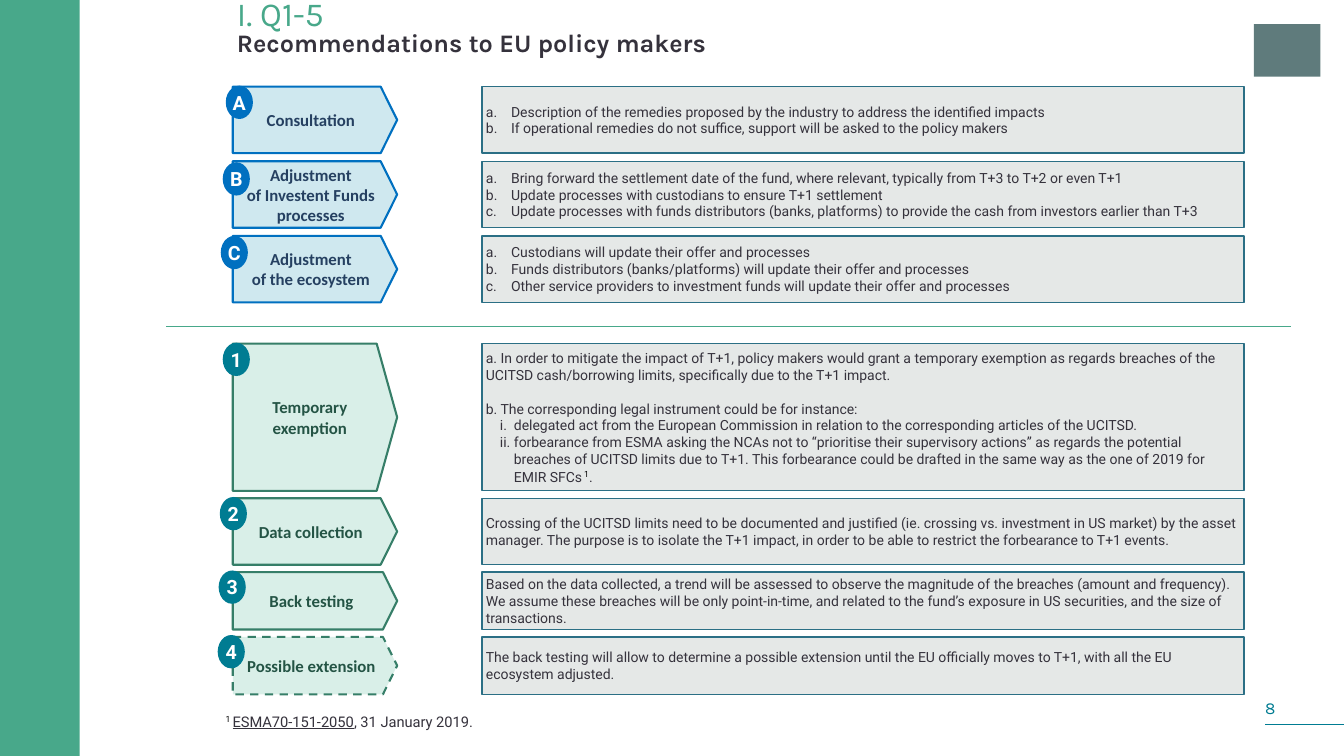
"""Build the slide of recommendations to EU policy makers."""
from dataclasses import dataclass, replace

from lxml.etree import SubElement
from pptx import Presentation
from pptx.dml.color import RGBColor as RGB
from pptx.enum.dml import MSO_LINE as Dash
from pptx.enum.shapes import MSO_CONNECTOR as Conn, MSO_SHAPE as Shp
from pptx.enum.text import MSO_ANCHOR as Anchor, PP_ALIGN as Align
from pptx.oxml.ns import qn
from pptx.util import Pt


@dataclass(frozen=True)
class Font:
    name: str
    size: float
    color: str
    bold: bool = False
    underline: bool = False
    raised: bool = False


@dataclass(frozen=True)
class Theme:
    green: str = "48A88A"
    teal: str = "007C92"
    blue: str = "0070C0"
    logo: str = "5F7B7C"
    panel: str = "E5E8E7"
    panel_line: str = "2B6F85"
    section: Font = Font("Karla", 24, "48A88A")
    title: Font = Font("Karla", 18, "35323C", bold=True)
    page: Font = Font("Karla", 12, "007C92")
    body: Font = Font("Roboto", 10, "35323C")
    note: Font = Font("Roboto", 10.5, "35323C")
    mark: Font = Font("Roboto", 10.5, "000000", raised=True)
    badge: Font = Font("Roboto", 14, "FFFFFF", bold=True)
    heading: Font = Font("Calibri", 12, "254061", bold=True)


@dataclass(frozen=True)
class Run:
    text: str
    font: Font


@dataclass(frozen=True)
class Para:
    runs: tuple[Run, ...]
    bullet: str = ""
    margin: float = 0
    hang: float = 0
    before: float = 0
    spacing: float = 1.0
    align: Align = Align.LEFT


@dataclass(frozen=True)
class Row:
    mark: str
    headings: tuple[str, ...]
    height: float
    badge: tuple[float, float]
    paras: tuple[Para, ...]
    point: float = 0.248
    dashed: bool = False


@dataclass(frozen=True)
class Group:
    top: float
    gap: float
    fill: str
    line: str
    badge: str
    heading: Font
    rows: tuple[Row, ...]


T = Theme()


def plain(text: str, font: Font = T.body, **kw) -> Para:
    """Return a paragraph of a single run."""
    return Para((Run(text, font),), **kw)


def lettered(*texts: str) -> tuple[Para, ...]:
    """Return paragraphs numbered a, b, c."""
    return tuple(plain(t, bullet="alphaLcPeriod", margin=18, hang=18) for t in texts)


def roman(*runs: Run) -> Para:
    """Return an indented paragraph with a roman number."""
    return Para(runs, bullet="romanLcPeriod", margin=20, hang=10)


INDUSTRY = Group(61.9, 5.8, "CFE8EF", T.blue, T.blue, T.heading, (
    Row("A", ("Consultation",), 47.5, (161.3, 61.2), lettered(
        "Description of the remedies proposed by the industry to address the identified impacts",
        "If operational remedies do not suffice, support will be asked to the policy makers")),
    Row("B", ("Adjustment", "of Investent Funds processes"), 47.5, (159.1, 115.9), lettered(
        "Bring forward the settlement date of the fund, where relevant, typically from T+3 to T+2 or even T+1",
        "Update processes with custodians to ensure T+1 settlement",
        "Update processes with funds distributors (banks, platforms) to provide the cash from investors "
        "earlier than T+3")),
    Row("C", ("Adjustment", "of the ecosystem"), 47.5, (157.7, 168.5), lettered(
        "Custodians will update their offer and processes",
        "Funds distributors (banks/platforms) will update their offer and processes",
        "Other service providers to investment funds will update their offer and processes")),
))
POLICY = Group(245.5, 5.3, "D9EFE8", "367E68", T.teal, replace(T.heading, color="245445"), (
    Row("1", ("Temporary", "exemption"), 105.1, (159.1, 244.8), (
        plain("a. In order to mitigate the impact of T+1, policy makers would grant a temporary exemption as "
              "regards breaches of the UCITSD cash/borrowing limits, specifically due to the T+1 impact."),
        plain("b. The corresponding legal instrument could be for instance:", before=12),
        roman(Run("delegated act from the European Commission in relation to the corresponding articles of "
                  "the UCITSD.", T.body)),
        roman(Run("forbearance from ESMA asking the NCAs not to “prioritise their supervisory actions” as "
                  "regards the potential\nbreaches of UCITSD limits due to T+1. This forbearance could be "
                  "drafted in the same way as the one of 2019 for\nEMIR SFCs", T.body),
              Run(" 1", T.mark), Run(".", T.body))), point=0.139),
    Row("2", ("Data collection",), 47.5, (157, 355), (
        plain("Crossing of the UCITSD limits need to be documented and justified (ie. crossing vs. investment "
              "in US market) by the asset manager. The purpose is to isolate the T+1 impact, in order to be "
              "able to restrict the forbearance to T+1 events."),)),
    Row("3", ("Back testing",), 41, (156.2, 407.5), (
        plain("Based on the data collected, a trend will be assessed to observe the magnitude of the breaches "
              "(amount and frequency)."),
        plain("We assume these breaches will be only point-in-time, and related to the fund’s exposure in US "
              "securities, and the size of transactions."))),
    Row("4", ("Possible extension",), 41, (155.5, 453.6), (
        plain("The back testing will allow to determine a possible extension until the EU officially moves "
              "to T+1, with all the EU ecosystem adjusted."),), dashed=True),
))


def write(s, paras: tuple[Para, ...], insets=(0, 0), anchor=Anchor.MIDDLE, wrap: bool = True) -> None:
    """Fill a shape with paragraphs, run by run."""
    tf = s.text_frame
    tf.word_wrap, tf.vertical_anchor = wrap, anchor
    tf.margin_left = tf.margin_right = Pt(insets[0])
    tf.margin_top = tf.margin_bottom = Pt(insets[1])
    for i, para in enumerate(paras):
        p = tf.add_paragraph() if i else tf.paragraphs[0]
        p.alignment, p.line_spacing = para.align, para.spacing
        if para.before:
            p.space_before = Pt(para.before)
        if para.bullet:
            ppr = p._p.get_or_add_pPr()
            ppr.set("marL", str(Pt(para.margin)))
            ppr.set("indent", str(-Pt(para.hang)))
            SubElement(ppr, qn("a:buAutoNum"), type=para.bullet)
        for run in para.runs:
            for n, line in enumerate(run.text.split("\n")):
                if n:
                    p.add_line_break()
                r = p.add_run()
                r.text = line
                f = r.font
                f.name, f.size, f.bold = run.font.name, Pt(run.font.size), run.font.bold
                f.underline = run.font.underline
                f.color.rgb = RGB.from_string(run.font.color)
                if run.font.raised:
                    f._element.set("baseline", "30000")


def add_box(shapes, kind: Shp, x: float, y: float, w: float, h: float, fill: str,
            line: str = "", width: float = 1):
    """Add a filled preset shape."""
    s = shapes.add_shape(kind, Pt(x), Pt(y), Pt(w), Pt(h))
    s.shadow.inherit = False
    s.fill.solid()
    s.fill.fore_color.rgb = RGB.from_string(fill)
    if line:
        s.line.color.rgb = RGB.from_string(line)
        s.line.width = Pt(width)
    else:
        s.line.fill.background()
    return s


def add_rule(shapes, x1: float, x2: float, y: float, color: str) -> None:
    """Add a thin horizontal line."""
    s = shapes.add_connector(Conn.STRAIGHT, Pt(x1), Pt(y), Pt(x2), Pt(y))
    s.line.color.rgb = RGB.from_string(color)
    s.line.width = Pt(0.5)
    SubElement(s._element.spPr, qn("a:effectLst"))


def add_text(shapes, x: float, y: float, w: float, h: float, *paras: Para, **kw) -> None:
    """Add a text box."""
    write(shapes.add_textbox(Pt(x), Pt(y), Pt(w), Pt(h)), paras, **kw)


def add_group(shapes, group: Group) -> None:
    """Add the rows of a group from top to bottom."""
    y = group.top
    for row in group.rows:
        panel = add_box(shapes, Shp.RECTANGLE, 344.2, y, 544.3, row.height, T.panel, T.panel_line)
        write(panel, row.paras, (2.9, 3.6))
        arrow = add_box(shapes, Shp.PENTAGON, 166.3, y, 117.4, row.height, group.fill, group.line, 1.5)
        arrow.adjustments[0] = row.point
        if row.dashed:
            arrow.line.dash_style = Dash.DASH
        write(arrow, tuple(plain(h, group.heading, align=Align.CENTER) for h in row.headings), (0, 3.6))
        badge = add_box(shapes, Shp.OVAL, *row.badge, 19.4, 23.8, group.badge)
        write(badge, (plain(row.mark, T.badge, align=Align.CENTER),), wrap=False)
        y += row.height + group.gap


def main() -> None:
    """Build and save the slide."""
    prs = Presentation()
    prs.slide_width, prs.slide_height = Pt(960), Pt(540)
    shapes = prs.slides.add_slide(prs.slide_layouts[6]).shapes
    add_box(shapes, Shp.RECTANGLE, 0, 0, 56.9, 540, T.green)
    add_box(shapes, Shp.RECTANGLE, 895.7, 17.3, 47.5, 37.4, T.logo)
    add_text(shapes, 169.2, 2, 620.6, 39, plain("I. Q1-5", T.section, spacing=0.8),
             plain("Recommendations to EU policy makers", T.title, spacing=0.8), anchor=Anchor.BOTTOM)
    for group in (INDUSTRY, POLICY):
        add_group(shapes, group)
    add_rule(shapes, 118.8, 922.3, 233.3, T.green)
    add_text(shapes, 154.1, 505.4, 709.2, 20.2, Para((
        Run("1 ", T.mark), Run("ESMA70-151-2050", replace(T.note, underline=True)),
        Run(", 31 January 2019.", T.note))), insets=(7.2, 3.6), anchor=Anchor.TOP)
    add_text(shapes, 903.6, 498.2, 13, 14.4, plain("8", T.page), wrap=False)
    add_rule(shapes, 903.6, 960, 517.7, T.teal)
    prs.save("out.pptx")


if __name__ == "__main__":
    main()
